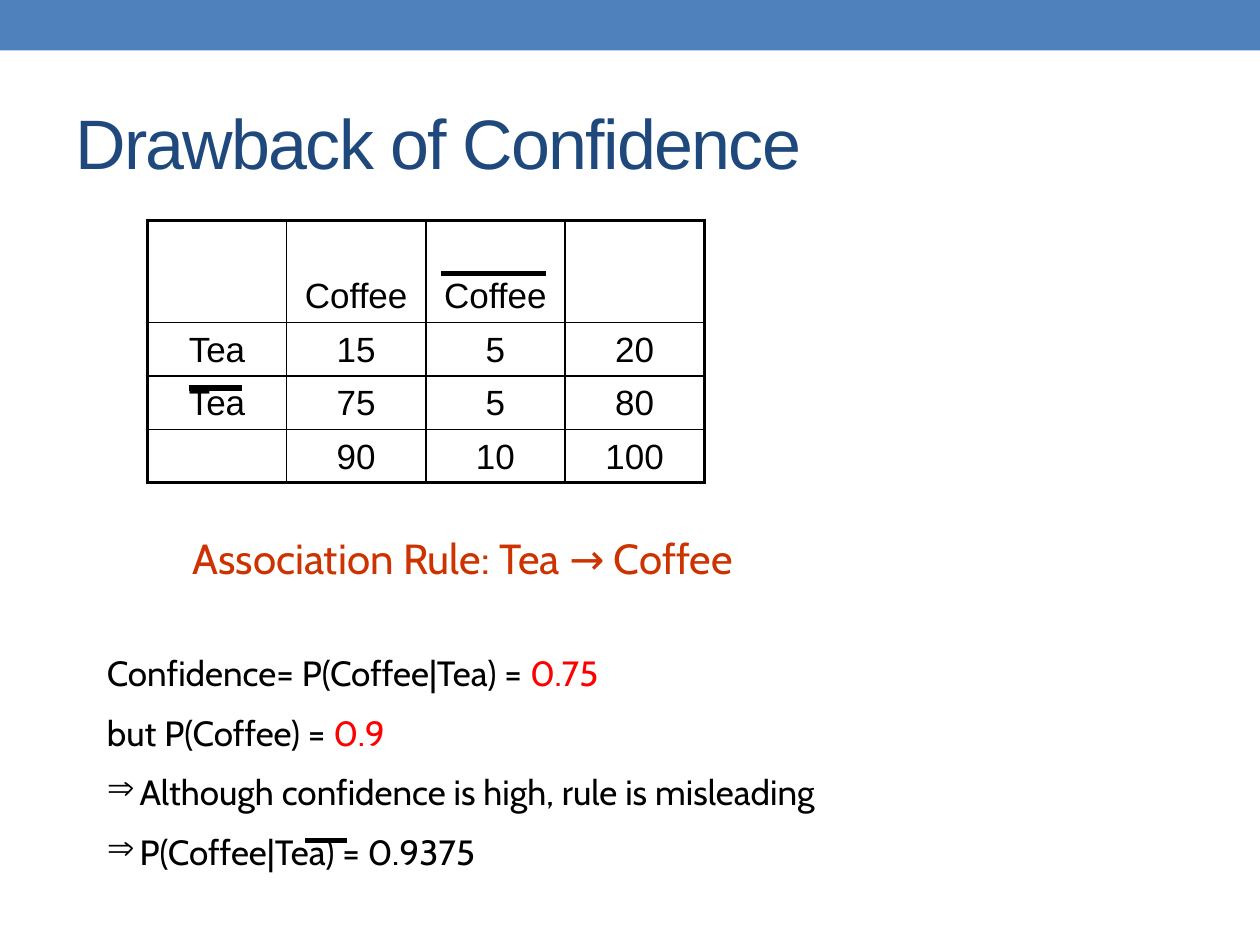
from lxml import etree
from pptx import Presentation
from pptx.dml.color import RGBColor
from pptx.enum import shapes, text
from pptx.oxml import ns
from pptx.util import Inches, Pt

BLUE = RGBColor(0x4F, 0x81, 0xBD)
NAVY = RGBColor(0x1F, 0x49, 0x7D)
ORANGE = RGBColor(0xCC, 0x33, 0x00)
RED = RGBColor(0xFF, 0x00, 0x00)
BLACK = RGBColor(0x00, 0x00, 0x00)
WHITE = RGBColor(0xFF, 0xFF, 0xFF)

COUNTS = [
    ["", "Coffee", "Coffee", ""],
    ["Tea", "15", "5", "20"],
    ["Tea", "75", "5", "80"],
    ["", "90", "10", "100"],
]
STATEMENTS = [
    ("", [("Confidence= P(Coffee|Tea) = ", BLACK), ("0.75", RED)]),
    ("", [("but P(Coffee) = ", BLACK), ("0.9", RED)]),
    ("⇒", [("Although confidence is high, rule is misleading", BLACK)]),
    ("⇒", [("P(Coffee|Tea) = 0.9375", BLACK)]),
]


def apply(target, values):
    for name, value in values.items():
        setattr(target, name, value)


def add_span(para, words, font, size, color):
    span = para.add_run()
    span.text = words
    apply(span.font, {"name": font, "size": Pt(size)})
    span.font.color.rgb = color
    return span


def add_frame(page, box, anchor):
    frame = page.shapes.add_textbox(*map(Inches, box)).text_frame
    apply(frame, {"word_wrap": True, "vertical_anchor": anchor})
    return frame


def add_overbar(page, left, top, width):
    bar = page.shapes.add_connector(
        shapes.MSO_CONNECTOR.STRAIGHT,
        Inches(left), Inches(top), Inches(left + width), Inches(top))
    bar.line.color.rgb = BLACK
    bar.line.width = Pt(3)
    etree.SubElement(bar._element.spPr, ns.qn("a:effectLst"))


def add_banner(page, box):
    banner = page.shapes.add_shape(
        shapes.MSO_SHAPE.RECTANGLE, *map(Inches, box))
    banner.shadow.inherit = False
    banner.fill.solid()
    banner.fill.fore_color.rgb = BLUE
    banner.line.fill.background()


def add_title(page, box):
    frame = add_frame(page, box, text.MSO_ANCHOR.MIDDLE)
    span = add_span(frame.paragraphs[0], "Drawback of Confidence", "Arial", 40, NAVY)
    span._r.get_or_add_rPr().set("spc", "-100")


def set_borders(cell, widths):
    properties = cell._tc.get_or_add_tcPr()
    for side, width in widths.items():
        line = etree.SubElement(properties, ns.qn(f"a:ln{side}"), w=str(Pt(width)))
        fill = etree.SubElement(line, ns.qn("a:solidFill"))
        etree.SubElement(fill, ns.qn("a:srgbClr"), val=str(BLACK))


def add_counts(page, box):
    left, top, width, height = box
    size = len(COUNTS)
    row_height = 0.41
    table = page.shapes.add_table(size, size, *map(Inches, box)).table
    apply(table, {"first_row": False, "horz_banding": False})
    for index in range(size):
        table.columns[index].width = Inches(width / size)
        table.rows[index].height = Inches(
            row_height if index else height - row_height * (size - 1))
    last = size - 1
    for row, values in enumerate(COUNTS):
        for column, value in enumerate(values):
            cell = table.cell(row, column)
            edges = {"L": column == 0, "R": column == last,
                     "T": row == 0, "B": row == last}
            set_borders(cell, {side: 2.25 if outer else 1
                               for side, outer in edges.items()})
            cell.fill.solid()
            cell.fill.fore_color.rgb = WHITE
            apply(cell, {"vertical_anchor": text.MSO_ANCHOR.BOTTOM,
                         "margin_top": Inches(0.04),
                         "margin_bottom": Inches(0.05)})
            para = cell.text_frame.paragraphs[0]
            para.alignment = text.PP_ALIGN.CENTER
            if value:
                add_span(para, value, "Arial", 20, BLACK)
    add_overbar(page, left + 2.33, top + 0.42, 0.83)
    add_overbar(page, left + 0.33, top + 1.33, 0.42)


def set_bullet(para, mark, indent):
    properties = para._p.get_or_add_pPr()
    properties.set("marL", str(Inches(indent)))
    properties.set("indent", str(-Inches(indent)))
    etree.SubElement(properties, ns.qn("a:buChar"), char=mark)


def add_argument(page, box):
    left, top, width, height = box
    frame = add_frame(page, box, text.MSO_ANCHOR.TOP)
    rule = frame.paragraphs[0]
    rule.space_after = Pt(29)
    rule._p.get_or_add_pPr().set("marL", str(Inches(0.68)))
    add_span(rule, "Association Rule: Tea → Coffee", "Cabin", 24, ORANGE)
    for mark, spans in STATEMENTS:
        para = frame.add_paragraph()
        para.space_before = Pt(10)
        if mark:
            set_bullet(para, mark, 0.26)
        for words, color in spans:
            add_span(para, words, "Cabin", 20, color)
    add_overbar(page, left + 1.67, top + 2.49, 0.33)


def main():
    deck = Presentation()
    apply(deck, {"slide_width": Inches(10), "slide_height": Inches(7.5)})
    page = deck.slides.add_slide(deck.slide_layouts[6])
    add_banner(page, (0, 0, 10, 0.4))
    add_title(page, (0.5, 0.58, 9, 1.08))
    add_counts(page, (1.17, 1.75, 4.42, 2.04))
    add_argument(page, (0.75, 4.18, 8.08, 2.9))
    deck.save("out.pptx")


if __name__ == "__main__":
    main()
